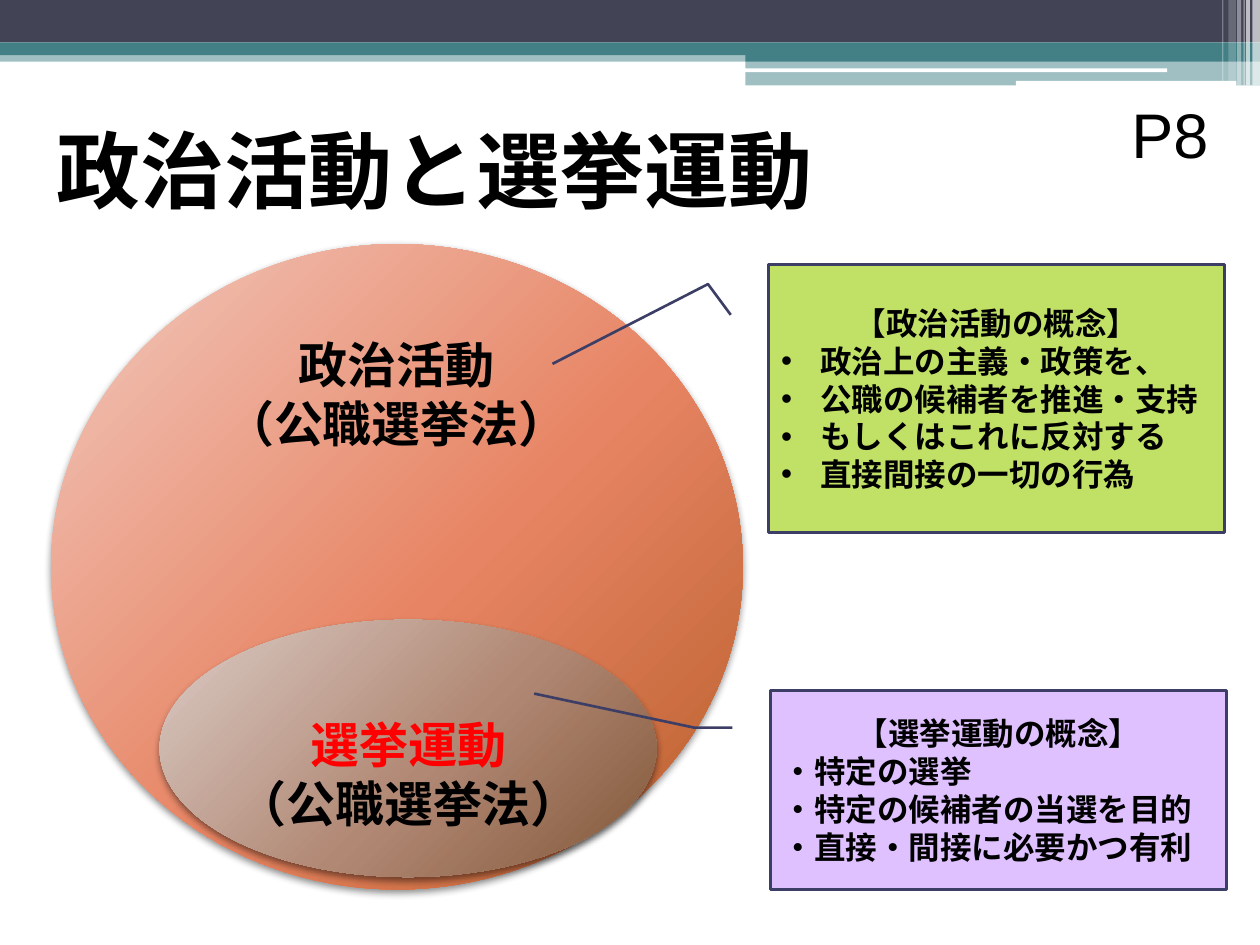
"""Build a slide that contrasts political activity with election campaigning."""
import copy
from dataclasses import dataclass
from typing import Optional

import lxml.etree
import pptx
import pptx.dml.color
import pptx.enum.shapes
import pptx.enum.text
import pptx.oxml.ns
import pptx.util

Pt = pptx.util.Pt
qn = pptx.oxml.ns.qn
Shapes = pptx.enum.shapes.MSO_SHAPE
Align = pptx.enum.text.PP_ALIGN


@dataclass(frozen=True)
class Theme:
    navy: str = "424456"
    teal: str = "438086"
    white: str = "FFFFFF"
    black: str = "000000"
    red: str = "FF0000"
    outline: str = "3D3E66"
    lime: str = "99CC00"
    violet: str = "CC99FF"
    coral: tuple = ("F2C9BF", "E78463", "B75E2A")
    brown: tuple = ("DBCCC6", "B18874", "825739")
    japanese: str = "Noto Sans CJK JP"
    latin: str = "Arial"
    title_size: float = 48
    page_size: float = 36
    label_size: float = 28
    body_size: float = 18


THEME = Theme()


@dataclass(frozen=True)
class Box:
    left: float
    top: float
    width: float
    height: float

    def lengths(self) -> tuple:
        return Pt(self.left), Pt(self.top), Pt(self.width), Pt(self.height)


@dataclass(frozen=True)
class Bar:
    box: Box
    color: str
    opacity: int = 100
    kind: Shapes = Shapes.RECTANGLE


@dataclass(frozen=True)
class Topic:
    oval: Box
    gradient: tuple
    label: Box
    name: str
    name_color: str


@dataclass(frozen=True)
class Callout:
    box: Box
    leader: tuple
    color: str
    heading: str
    points: tuple
    indent: Optional[float] = None


HEADER = (
    Bar(Box(0, 28.8, 720, 6.5), THEME.teal, 50),
    Bar(Box(0, 0, 720, 24.3), THEME.navy),
    Bar(Box(0, 24.3, 720, 7.2), THEME.teal),
    Bar(Box(426, 28, 294, 7.2), THEME.teal),
    Bar(Box(426, 35.2, 294, 13.6), THEME.teal, 50),
    Bar(Box(425.5, 39.1, 241.5, 2.2), THEME.white, 100, Shapes.ROUNDED_RECTANGLE),
    Bar(Box(580.5, 46.2, 126, 2.8), THEME.white, 100, Shapes.ROUNDED_RECTANGLE),
    Bar(Box(715.7, 0, 4.3, 48.8), THEME.white, 65),
    Bar(Box(712.1, 0, 2.2, 48.8), THEME.white, 65),
    Bar(Box(710.6, 0, 0.7, 48.8), THEME.white, 60),
    Bar(Box(707, 0, 2.2, 48.8), THEME.white, 40),
    Bar(Box(702, 0, 4.3, 46.2), THEME.white, 20),
    Bar(Box(698.4, 0, 0.7, 46.2), THEME.white, 30),
)

TOPICS = (
    Topic(Box(29.2, 139.5, 395.3, 368.8), THEME.coral,
          Box(123, 195, 207, 64), "政治活動", THEME.black),
    Topic(Box(91.2, 354.2, 284, 147), THEME.brown,
          Box(133, 412, 201, 64), "選挙運動", THEME.red),
)

CALLOUTS = (
    Callout(Box(439.2, 151.2, 260.6, 153),
            (0.188, -0.083, 0.073, -0.133, 0.371, -0.474),
            THEME.lime, "【政治活動の概念】",
            ("政治上の主義・政策を、", "公職の候補者を推進・支持",
             "もしくはこれに反対する", "直接間接の一切の行為"), 22.5),
    Callout(Box(440.2, 394.4, 260.6, 113.8),
            (0.188, -0.083, 0.188, -0.167, 0.017, -0.518),
            THEME.violet, "【選挙運動の概念】",
            ("・特定の選挙", "・特定の候補者の当選を目的", "・直接・間接に必要かつ有利")),
)


def rgb(color: str) -> pptx.dml.color.RGBColor:
    return pptx.dml.color.RGBColor.from_string(color)


def fill_solid(shape, color: str, opacity: int) -> None:
    shape.shadow.inherit = False
    shape.fill.solid()
    shape.fill.fore_color.rgb = rgb(color)
    if opacity < 100:
        value = shape._element.spPr.find(f"{qn('a:solidFill')}/{qn('a:srgbClr')}")
        lxml.etree.SubElement(value, qn("a:alpha"), val=str(opacity * 1000))


def format_text(paragraph, size: float, color: str = THEME.black,
                font: str = THEME.japanese, bold: bool = True) -> None:
    for run in paragraph.runs:
        run.font.size = Pt(size)
        run.font.bold = bold
        run.font.color.rgb = rgb(color)
        run.font.name = font
        lxml.etree.SubElement(run._r.get_or_add_rPr(), qn("a:ea"), typeface=font)


def add_text(slide, box: Box, text: str):
    frame = slide.shapes.add_textbox(*box.lengths()).text_frame
    frame.word_wrap = True
    frame.vertical_anchor = pptx.enum.text.MSO_ANCHOR.MIDDLE
    frame.text = text
    return frame


def add_bar(slide, bar: Bar) -> None:
    shape = slide.shapes.add_shape(bar.kind, *bar.box.lengths())
    fill_solid(shape, bar.color, bar.opacity)
    shape.line.fill.background()


def add_topic(slide, topic: Topic) -> None:
    oval = slide.shapes.add_shape(Shapes.OVAL, *topic.oval.lengths())
    oval.line.fill.background()
    oval.fill.gradient()
    oval.fill.gradient_angle = 315
    properties = oval._element.spPr
    stops = properties.find(f"{qn('a:gradFill')}/{qn('a:gsLst')}")
    stops.append(copy.deepcopy(stops[-1]))
    for stop, position, color in zip(oval.fill.gradient_stops, (0, 0.55, 1), topic.gradient):
        stop.position = position
        stop.color.rgb = rgb(color)
    oval.shadow.inherit = False
    shadow = lxml.etree.SubElement(
        properties.find(qn("a:effectLst")), qn("a:outerShdw"),
        blurRad=str(Pt(4)), dist=str(Pt(2)), dir="5400000", rotWithShape="0")
    shade = lxml.etree.SubElement(shadow, qn("a:srgbClr"), val=THEME.black)
    lxml.etree.SubElement(shade, qn("a:alpha"), val="45000")

    frame = add_text(slide, topic.label, f"{topic.name}\n（公職選挙法）")
    frame.margin_left = frame.margin_right = frame.margin_top = frame.margin_bottom = 0
    for paragraph, color in zip(frame.paragraphs, (topic.name_color, THEME.black)):
        paragraph.alignment = Align.CENTER
        paragraph.line_spacing = 0.9
        paragraph.space_after = Pt(3.5)
        format_text(paragraph, THEME.label_size, color)


def add_callout(slide, callout: Callout) -> None:
    shape = slide.shapes.add_shape(Shapes.LINE_CALLOUT_2, *callout.box.lengths())
    for index, value in enumerate(callout.leader):
        shape.adjustments[index] = value
    fill_solid(shape, callout.color, 60)
    shape.line.color.rgb = rgb(THEME.outline)
    shape.line.width = Pt(1.5)
    frame = shape.text_frame
    frame.vertical_anchor = pptx.enum.text.MSO_ANCHOR.MIDDLE
    frame.text = "\n".join((callout.heading, *callout.points))
    for index, paragraph in enumerate(frame.paragraphs):
        paragraph.alignment = Align.LEFT if index else Align.CENTER
        format_text(paragraph, THEME.body_size)
        if index and callout.indent:
            properties = paragraph._p.get_or_add_pPr()
            properties.set("marL", str(Pt(callout.indent)))
            properties.set("indent", str(-Pt(callout.indent)))
            lxml.etree.SubElement(properties, qn("a:buFont"), typeface=THEME.latin)
            lxml.etree.SubElement(properties, qn("a:buChar"), char="•")


def main() -> None:
    presentation = pptx.Presentation()
    presentation.slide_width, presentation.slide_height = Pt(720), Pt(540)
    slide = presentation.slides.add_slide(presentation.slide_layouts[6])
    for bar in HEADER:
        add_bar(slide, bar)
    title = add_text(slide, Box(25.2, 54.7, 648, 84.2), "政治活動と選挙運動")
    format_text(title.paragraphs[0], THEME.title_size)
    for topic in TOPICS:
        add_topic(slide, topic)
    for callout in CALLOUTS:
        add_callout(slide, callout)
    page = add_text(slide, Box(639.4, 50.4, 62.6, 51), "P8")
    format_text(page.paragraphs[0], THEME.page_size, font=THEME.latin, bold=False)
    presentation.save("out.pptx")


if __name__ == "__main__":
    main()
